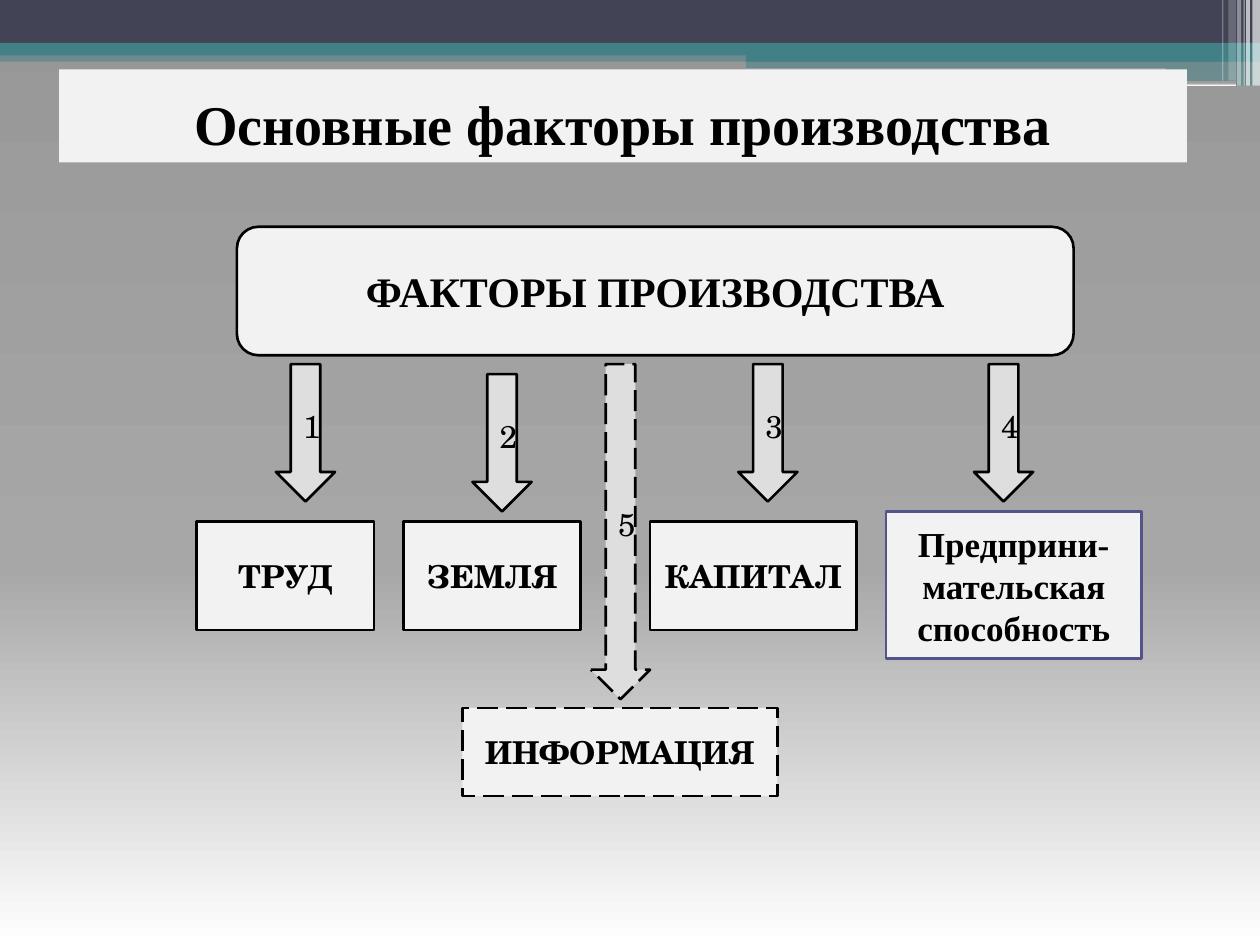
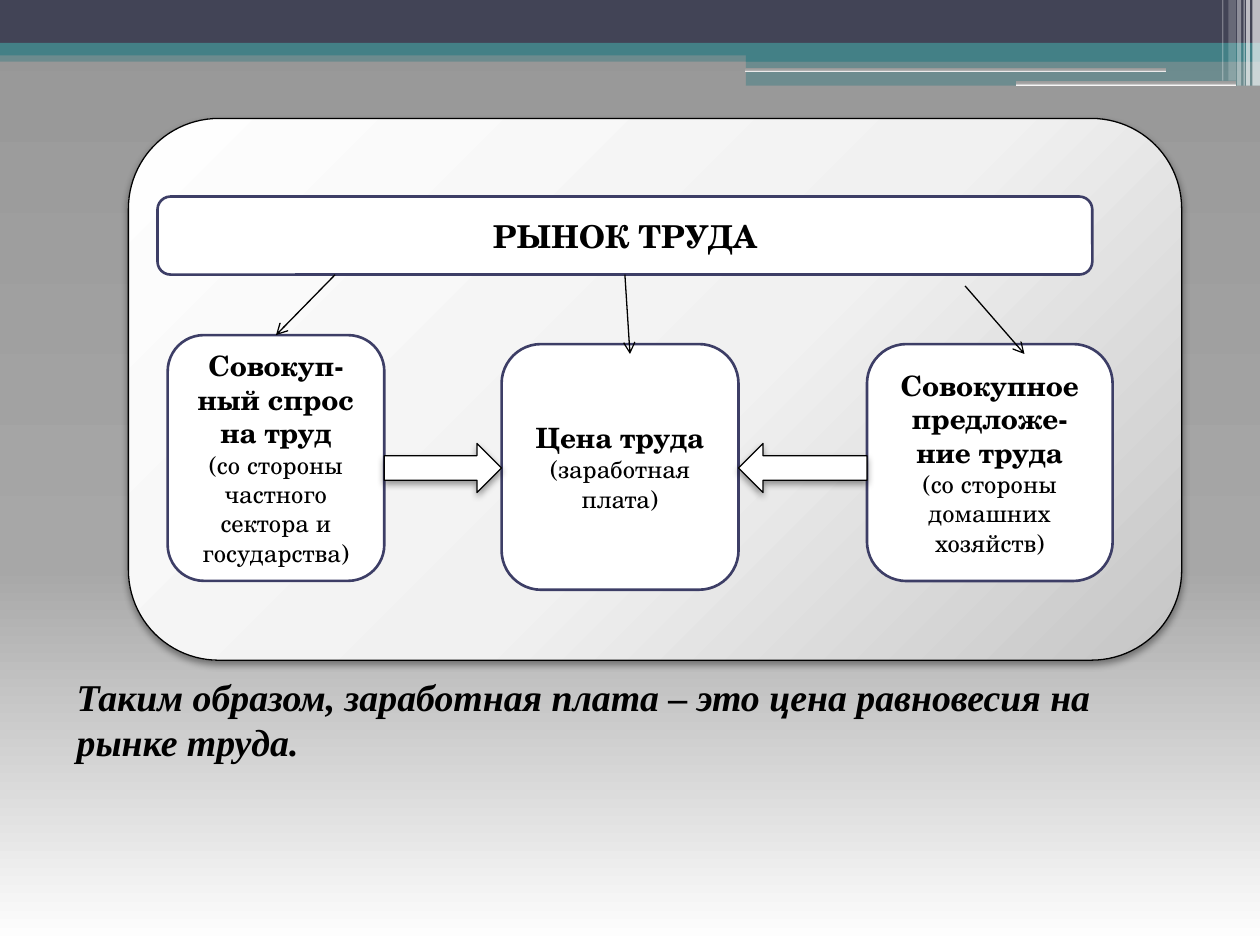
from pptx import Presentation
from pptx.dml.color import RGBColor
from pptx.enum.dml import MSO_LINE
from pptx.enum.shapes import MSO_CONNECTOR, MSO_SHAPE as SHAPE
from pptx.enum.text import MSO_ANCHOR as ANCHOR, PP_ALIGN as ALIGN
from pptx.oxml import parse_xml
from pptx.oxml.ns import nsdecls, qn
from pptx.util import Pt

COLORS = {
    "navy": "424456", "teal": "438086", "white": "FFFFFF", "black": "000000",
    "box": "F2F2F2", "arrow": "DEDEDE", "indigo": "53548A", "frame": "3D3E66",
}
SERIF, SCHOOL = "Times New Roman", "TeX Gyre Schola"
SLIDE_W, SLIDE_H = 720, 540

DOWNWARD = '<a:lin ang="5400000" scaled="0"/>'
FROM_CORNER = ('<a:path path="circle"><a:fillToRect l="-40000" t="-90000" '
               'r="140000" b="190000"/></a:path>')
BACKDROP = [(0, "979797"), (60, "A7A7A7"), (100, "FFFFFF")]
PANEL_SHADE = [(0, "FEFEFE"), (55, "F1F1F1"), (100, "C5C5C5")]

# Header: (left, top, width, height), colour, opacity in percent
BANDS = [
    ((0, 28.8, SLIDE_W, 6.5), "teal", 50),
    ((0, 0, SLIDE_W, 24.5), "navy", 100),
    ((0, 24.5, SLIDE_W, 7.2), "teal", 100),
    ((426.2, 28.1, 293.8, 7.2), "teal", 100),
    ((426.2, 34.6, 293.8, 14.4), "teal", 50),
]
SLITS = [(425.5, 38.9, 241.2, 2.2), (580.3, 46.1, 126, 2.9)]
# Corner stripes: left, width, height, opacity in percent
STRIPES = [(715.7, 4.3, 49, 65), (712.1, 2.2, 49, 65), (710.6, 0.7, 49, 60),
           (707, 2.2, 49, 40), (702, 4.3, 46.1, 20), (698.4, 0.7, 46.1, 30)]

TITLE = "Основные факторы производства"
FACTORS_HEAD = "ФАКТОРЫ ПРОИЗВОДСТВА"
ARROW_W = 33.8
# name, font, size, box, outline, arrow (left, top, height), dashed
FACTORS = [
    ("ТРУД", SCHOOL, 18, (112.3, 298.1, 101.5, 61.9), "black", (157.7, 208.1, 78.5), False),
    ("ЗЕМЛЯ", SCHOOL, 18, (230.4, 298.1, 101.5, 61.9), "black", (270, 213.8, 78.5), False),
    ("КАПИТАЛ", SCHOOL, 18, (371.5, 298.1, 118.1, 61.9), "black", (421.9, 208.1, 78.5), False),
    ("Предприни-мательская способность", SERIF, 20, (506.2, 292.3, 146.2, 84.2), "indigo",
     (556.6, 208.1, 78.5), False),
    ("ИНФОРМАЦИЯ", SCHOOL, 18, (264.2, 404.6, 180, 50.4), "black", (337.7, 208.1, 191.5), True),
]

MARKET = "РЫНОК ТРУДА"
MARKET_SIDES = [
    ("Совокуп-ный спрос на труд", "(со стороны частного сектора и государства)",
     (95.8, 191.5, 123.8, 140.4)),
    ("Цена труда", "(заработная плата)", (286.6, 196.6, 135.4, 140.4)),
    ("Совокупное предложе-ние труда", "(со стороны домашних хозяйств)",
     (495.4, 196.6, 140.4, 135.4)),
]
MARKET_LINES = [(191.5, 157, 157.7, 191.5), (357.1, 156.9, 360, 202.3), (551.5, 163.4, 585.4, 202.3)]
CONCLUSION = "Таким образом, заработная плата – это цена равновесия на рынке труда."


def rgb(name):
    return RGBColor.from_string(COLORS[name])


def set_gradient(owner, fill, stops, direction):
    """Give fill the stops, each (percent, hex), and a direction element."""
    fill.gradient()
    old = next(owner.element.iter(qn("a:gradFill")))
    marks = "".join(f'<a:gs pos="{pos * 1000}"><a:srgbClr val="{color}"/></a:gs>'
                    for pos, color in stops)
    new = parse_xml(f'<a:gradFill {nsdecls("a")} rotWithShape="1">'
                    f'<a:gsLst>{marks}</a:gsLst>{direction}</a:gradFill>')
    old.getparent().replace(old, new)


def set_opacity(sp, percent):
    color = next(sp.element.iter(qn("a:srgbClr")))
    color.append(parse_xml(f'<a:alpha {nsdecls("a")} val="{percent * 1000}"/>'))


def add_shadow(sp):
    next(sp.element.iter(qn("a:effectLst"))).append(parse_xml(
        f'<a:outerShdw {nsdecls("a")} blurRad="{Pt(4.1)}" dist="{Pt(2)}" dir="5400000" '
        'rotWithShape="0"><a:srgbClr val="000000"><a:alpha val="40000"/></a:srgbClr>'
        '</a:outerShdw>'))


def write(tf, lines, font, align=ALIGN.CENTER, italic=False):
    """Fill tf with lines, each (text, size, bold)."""
    tf.word_wrap = True
    for i, (text, size, bold) in enumerate(lines):
        p = tf.paragraphs[0] if i == 0 else tf.add_paragraph()
        p.text, p.alignment = text, align
        p.font.name, p.font.size = font, Pt(size)
        p.font.bold, p.font.italic = bold, italic
        p.font.color.rgb = rgb("black")


def add_block(s, kind, box, fill=None, outline=None, weight=1.5, dashed=False,
              lines=(), font=SCHOOL):
    sp = s.shapes.add_shape(kind, *map(Pt, box))
    sp.shadow.inherit = False
    if fill:
        sp.fill.solid()
        sp.fill.fore_color.rgb = rgb(fill)
    if outline:
        sp.line.color.rgb = rgb(outline)
        sp.line.width = Pt(weight)
        if dashed:
            sp.line.dash_style = MSO_LINE.LONG_DASH
    else:
        sp.line.fill.background()
    write(sp.text_frame, lines, font)
    return sp


def add_arrow_line(s, x1, y1, x2, y2):
    line = s.shapes.add_connector(MSO_CONNECTOR.STRAIGHT, *map(Pt, (x1, y1, x2, y2)))
    line.line.color.rgb = rgb("black")
    line.line.width = Pt(0.75)
    next(line.element.iter(qn("a:ln"))).append(
        parse_xml(f'<a:tailEnd {nsdecls("a")} type="arrow"/>'))
    line.element.spPr.append(parse_xml(f'<a:effectLst {nsdecls("a")}/>'))
    return line


def add_base_slide(prs):
    """Add a blank slide with the header bands."""
    s = prs.slides.add_slide(prs.slide_layouts[6])
    set_gradient(s, s.background.fill, BACKDROP, DOWNWARD)
    for box, color, opacity in BANDS:
        set_opacity(add_block(s, SHAPE.RECTANGLE, box, color), opacity)
    for box in SLITS:
        slit = add_block(s, SHAPE.ROUNDED_RECTANGLE, box)
        set_gradient(slit, slit.fill, BACKDROP, DOWNWARD)
    for left, width, height, opacity in STRIPES:
        stripe = add_block(s, SHAPE.RECTANGLE, (left, 0, width, height), "white")
        set_opacity(stripe, opacity)
    return s


def build_factors(prs):
    s = add_base_slide(prs)
    title = add_block(s, SHAPE.RECTANGLE, (33.8, 39.6, 644.4, 53.3), "box",
                      lines=[(TITLE, 32, True)], font=SERIF)
    title.text_frame.vertical_anchor = ANCHOR.BOTTOM
    add_block(s, SHAPE.ROUNDED_RECTANGLE, (135.4, 129.6, 478.1, 73.4), "box", "black",
              lines=[(FACTORS_HEAD, 24, True)], font=SERIF)
    for number, factor in enumerate(FACTORS, 1):
        name, font, size, box, outline, (left, top, height), dashed = factor
        add_block(s, SHAPE.DOWN_ARROW, (left, top, ARROW_W, height), "arrow", "black",
                  dashed=dashed, lines=[(str(number), 18, False)])
        add_block(s, SHAPE.RECTANGLE, box, "box", outline, dashed=dashed,
                  lines=[(name, size, True)], font=font)


def build_labour_market(prs):
    s = add_base_slide(prs)
    tf = s.shapes.add_textbox(*map(Pt, (36.7, 385, 644.4, 130))).text_frame
    tf.margin_top = 0
    write(tf, [(CONCLUSION, 21.6, True)], SERIF, ALIGN.LEFT, italic=True)

    panel = add_block(s, SHAPE.ROUNDED_RECTANGLE, (73.4, 67.7, 601.9, 309.6),
                      outline="black", weight=0.75)
    set_gradient(panel, panel.fill, PANEL_SHADE, FROM_CORNER)
    add_shadow(panel)
    market = add_block(s, SHAPE.ROUNDED_RECTANGLE, (90, 112.3, 534.2, 44.6), "white", "frame",
                       lines=[(MARKET, 18, True)])
    sides = [add_block(s, SHAPE.ROUNDED_RECTANGLE, box, "white", "frame",
                       lines=[(head, 16, True), (note, 14, False)])
             for head, note, box in MARKET_SIDES]

    boxes = [box for _, _, box in MARKET_SIDES]
    for kind, a, b in zip((SHAPE.RIGHT_ARROW, SHAPE.LEFT_ARROW), boxes, boxes[1:]):
        start = a[0] + a[2]
        add_shadow(add_block(s, kind, (start, 253.4, b[0] - start, 28.1),
                             "white", "black", 0.75))

    to_demand, to_price, _ = [add_arrow_line(s, *ends) for ends in MARKET_LINES]
    to_demand.end_connect(sides[0], 0)
    to_price.begin_connect(market, 2)


def main():
    prs = Presentation()
    prs.slide_width, prs.slide_height = Pt(SLIDE_W), Pt(SLIDE_H)
    build_factors(prs)
    build_labour_market(prs)
    prs.save("out.pptx")


if __name__ == "__main__":
    main()
